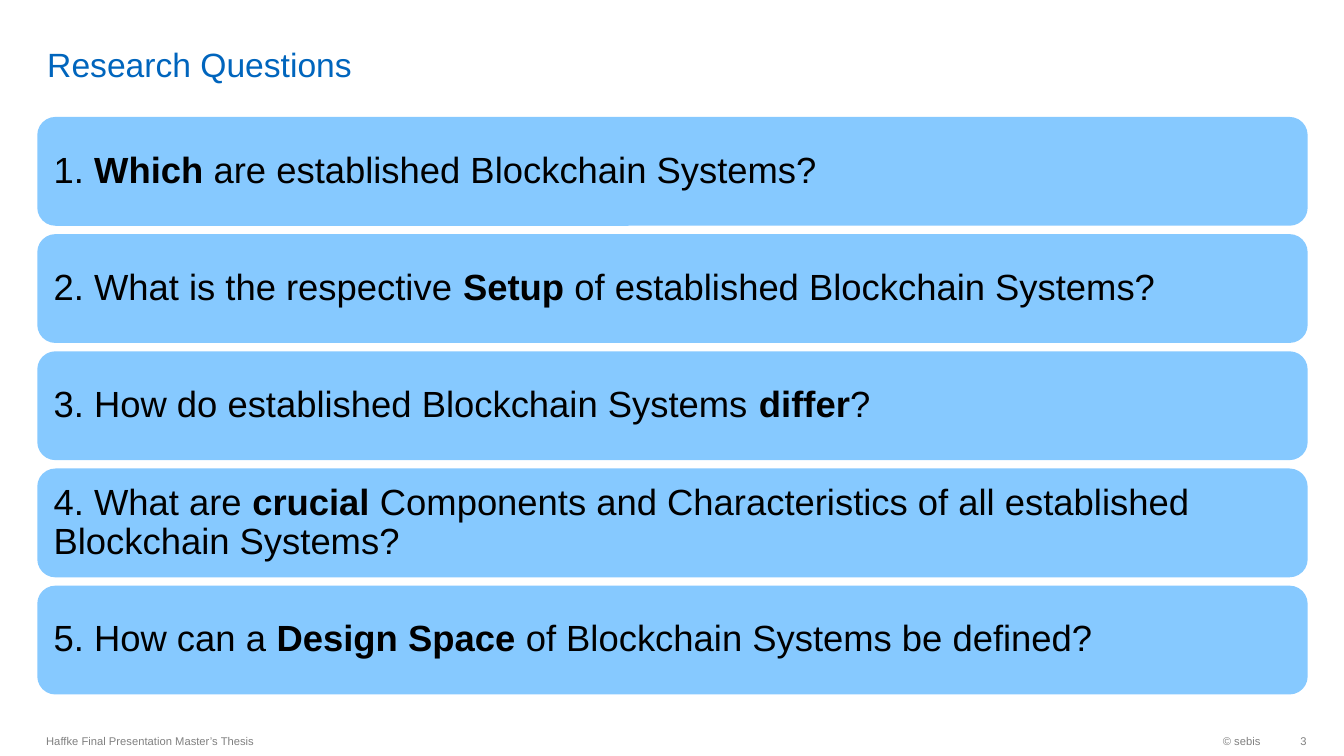
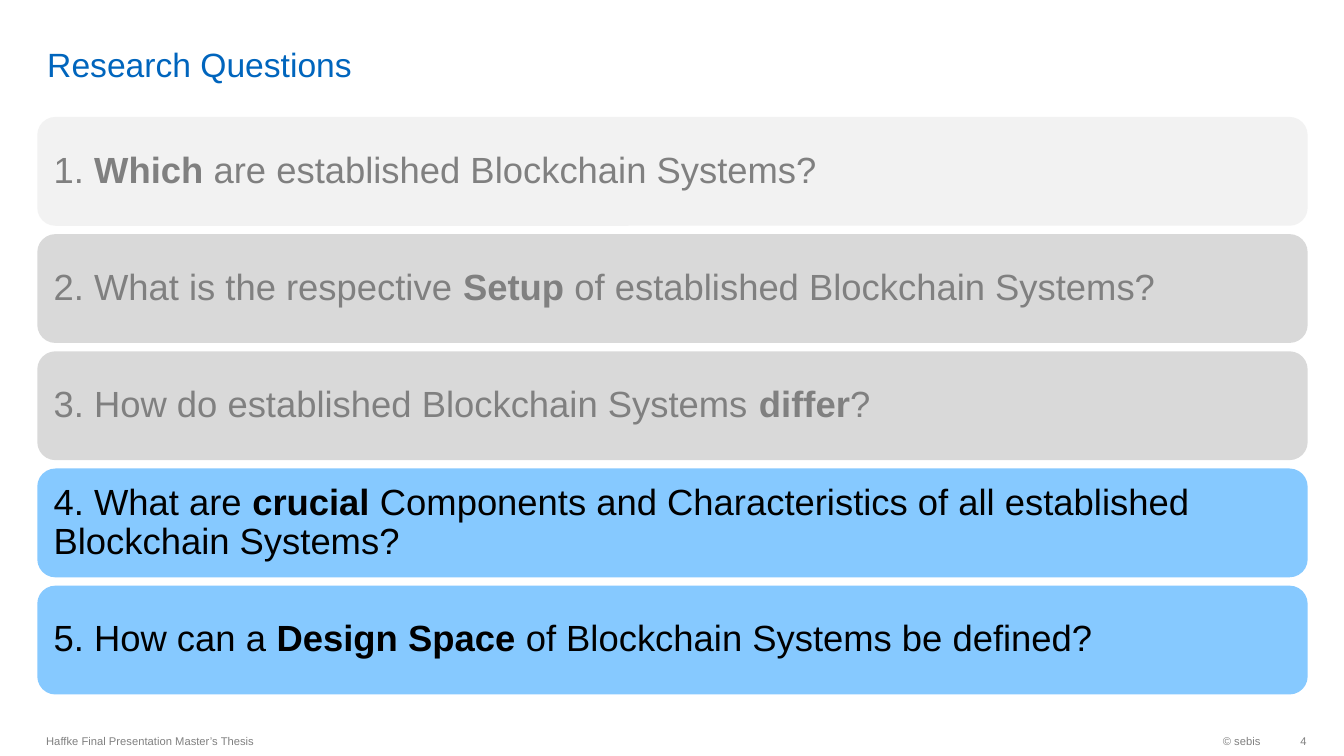
from pptx import Presentation
from pptx import util as u
from pptx.dml.color import RGBColor
from pptx.enum import shapes, text

SLIDE_WIDTH, SLIDE_HEIGHT = 13.33, 7.5
LEFT, TOP, WIDTH, BOTTOM = 0.37, 1.16, 12.6, 6.89
ROW_HEIGHT = 1.08
FOOTER_TOP, FOOTER_HEIGHT = 7.19, 0.32
BLANK_LAYOUT = 6

BLUE, BLACK, GREY = "0065BD", "000000", "808080"
ACTIVE = ("86C9FF", BLACK)
DONE = ("D9D9D9", GREY)
DONE_LIGHT = ("F2F2F2", GREY)

TITLE = {"size": u.Pt(24), "name": "Arial"}
QUESTION = {"size": u.Pt(26), "name": "Arial"}
FOOTER = {"size": u.Pt(8), "name": "Arial"}

QUESTIONS = [
    ("1. ", "Which", " are established Blockchain Systems?"),
    ("2. What is the respective ", "Setup", " of established Blockchain Systems?"),
    ("3. How do established Blockchain Systems ", "differ", "?"),
    ("4. What are ", "crucial",
     " Components and Characteristics of all established Blockchain Systems?"),
    ("5. How can a ", "Design Space", " of Blockchain Systems be defined?"),
]
PAGES = {
    3: [ACTIVE] * 5,
    4: [DONE_LIGHT, DONE, DONE, ACTIVE, ACTIVE],
}


def colour(value):
    return RGBColor.from_string(value)


def inches(*lengths):
    return [u.Inches(length) for length in lengths]


def apply(target, values):
    for key, value in values.items():
        setattr(target, key, value)


def set_frame(frame, anchor, insets):
    sides = ("margin_left", "margin_top", "margin_right", "margin_bottom")
    apply(frame, {"word_wrap": True, "vertical_anchor": anchor,
                  **dict(zip(sides, inches(*insets)))})


def add_run(paragraph, wording, style, hex_colour, bold=False):
    run = paragraph.add_run()
    run.text = wording
    apply(run.font, {**style, "bold": bold})
    run.font.color.rgb = colour(hex_colour)


def add_label(slide, wording, box, style, hex_colour,
              align=text.PP_ALIGN.LEFT, anchor=text.MSO_ANCHOR.MIDDLE,
              insets=(0.1, 0.05, 0.1, 0.05)):
    frame = slide.shapes.add_textbox(*inches(*box)).text_frame
    set_frame(frame, anchor, insets)
    paragraph = frame.paragraphs[0]
    paragraph.alignment = align
    add_run(paragraph, wording, style, hex_colour)


def add_question(slide, row, question, scheme):
    fill, ink = scheme
    pitch = (BOTTOM - TOP - ROW_HEIGHT) / (len(QUESTIONS) - 1)
    bar = slide.shapes.add_shape(
        shapes.MSO_SHAPE.ROUNDED_RECTANGLE,
        *inches(LEFT, TOP + row * pitch, WIDTH, ROW_HEIGHT))
    bar.shadow.inherit = False
    bar.fill.solid()
    bar.fill.fore_color.rgb = colour(fill)
    bar.line.fill.background()
    set_frame(bar.text_frame, text.MSO_ANCHOR.MIDDLE, [0.11] * 4)
    paragraph = bar.text_frame.paragraphs[0]
    apply(paragraph, {"alignment": text.PP_ALIGN.LEFT, "line_spacing": 0.9})
    for wording, bold in zip(question, (False, True, False)):
        add_run(paragraph, wording, QUESTION, ink, bold)


def add_title(slide, wording):
    add_label(slide, wording, (LEFT, 0.05, 11.58, 0.79), TITLE, BLUE,
              anchor=text.MSO_ANCHOR.BOTTOM, insets=(0.1, 0, 0.1, 0))


def add_footer(slide, page):
    right = text.PP_ALIGN.RIGHT
    add_label(slide, "© sebis", (10.26, FOOTER_TOP, 2.34, FOOTER_HEIGHT),
              FOOTER, GREY, right)
    add_label(slide, "Haffke Final Presentation Master’s Thesis",
              (0.36, FOOTER_TOP, 6.3, FOOTER_HEIGHT), FOOTER, GREY)
    add_label(slide, str(page), (12.6, FOOTER_TOP, 0.36, FOOTER_HEIGHT),
              FOOTER, GREY, right, insets=(0.1, 0.05, 0, 0.05))


def main():
    deck = Presentation()
    deck.slide_width, deck.slide_height = inches(SLIDE_WIDTH, SLIDE_HEIGHT)
    for page, schemes in PAGES.items():
        slide = deck.slides.add_slide(deck.slide_layouts[BLANK_LAYOUT])
        add_title(slide, "Research Questions")
        for row, (question, scheme) in enumerate(zip(QUESTIONS, schemes)):
            add_question(slide, row, question, scheme)
        add_footer(slide, page)
    deck.save("out.pptx")


if __name__ == "__main__":
    main()
